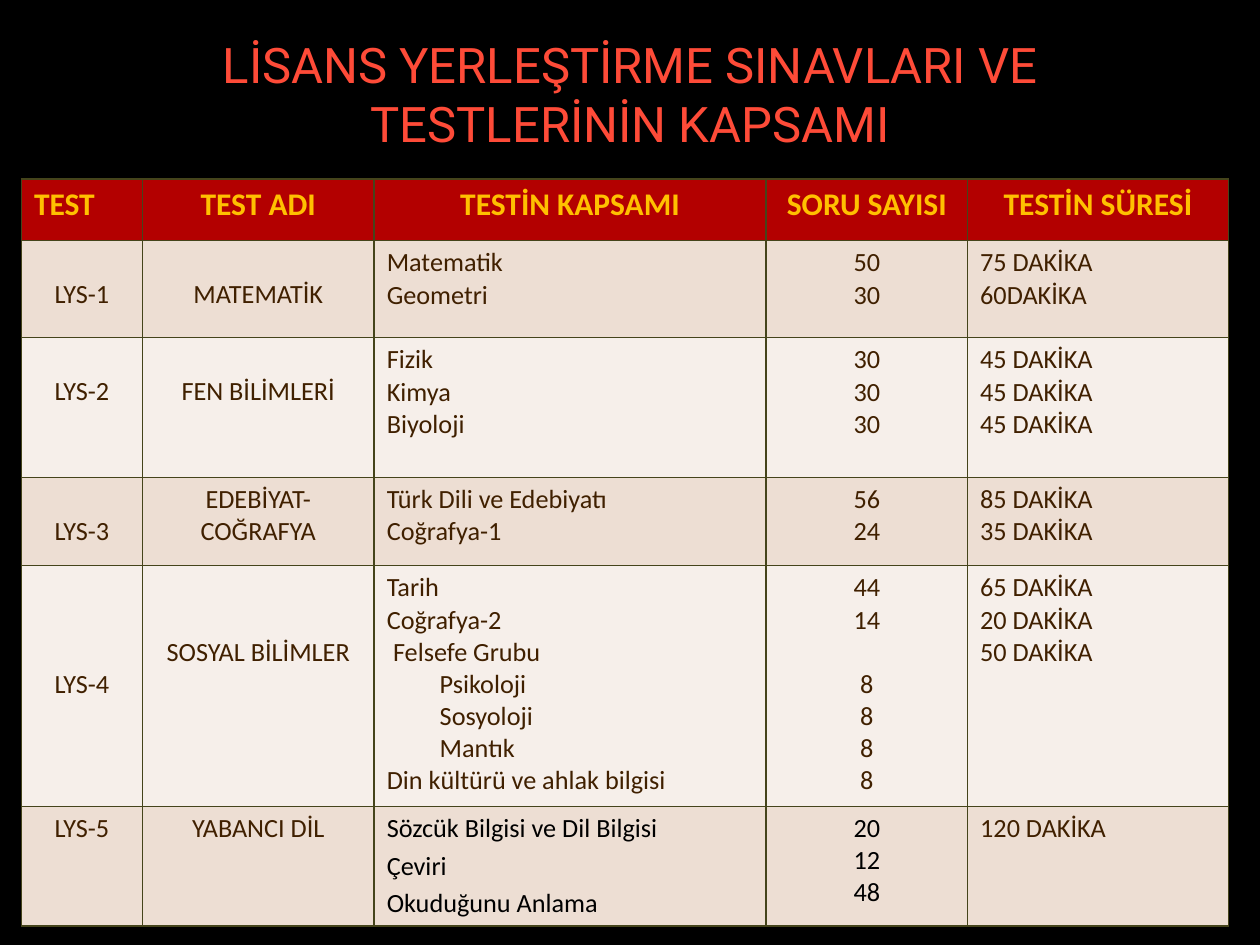
"""Builds a slide with a table of the university placement tests."""
from lxml.etree import SubElement
from pptx import Presentation
from pptx.dml.color import RGBColor
from pptx.enum.text import MSO_ANCHOR, PP_ALIGN as Align
from pptx.oxml.ns import qn
from pptx.util import Inches, Pt

HEADER = ["TEST", "TEST ADI", "TESTİN KAPSAMI", "SORU SAYISI", "TESTİN SÜRESİ"]
TESTS = [
    ["LYS-1", "MATEMATİK", "Matematik\nGeometri", "50\n30", "75 DAKİKA\n60DAKİKA"],
    ["LYS-2", "FEN BİLİMLERİ", "Fizik\nKimya\nBiyoloji", "30\n30\n30",
     "45 DAKİKA\n45 DAKİKA\n45 DAKİKA"],
    ["LYS-3", "EDEBİYAT-COĞRAFYA", "Türk Dili ve Edebiyatı\nCoğrafya-1", "56\n24",
     "85 DAKİKA\n35 DAKİKA"],
    ["LYS-4", "SOSYAL BİLİMLER",
     "Tarih\nCoğrafya-2\nFelsefe Grubu\nPsikoloji\nSosyoloji\nMantık\n"
     "Din kültürü ve ahlak bilgisi",
     "44\n14\n8\n8\n8\n8", "65 DAKİKA\n20 DAKİKA\n50 DAKİKA"],
    ["LYS-5", "YABANCI DİL", "Sözcük Bilgisi ve Dil Bilgisi\nÇeviri\nOkuduğunu Anlama",
     "20\n12\n48", "120 DAKİKA"],
]
WIDTHS = [0.96, 1.84, 3.11, 1.6, 2.07]
HEIGHTS = [0.49, 0.77, 1.11, 0.7, 1.91, 0.95]
LINES_ABOVE = {(1, 0): 1, (1, 1): 1, (2, 0): 1, (2, 1): 1, (3, 0): 1, (4, 0): 3, (4, 1): 2}
INDENTS = {"Felsefe Grubu": 0.05, "Psikoloji": 0.42, "Sosyoloji": 0.42, "Mantık": 0.42}
LINE_POINTS = 18.3
CENTRED = (0, 1, 3)
BANDS = ("F6EFEA", "EDDED3")


def colour(code):
    """Turn a hex string into a colour."""
    return RGBColor.from_string(code)


class Slide:
    """Holds the style and the page being built."""

    body_font, title_font = "Calibri", "Roboto"
    border = "45441B"

    def __init__(self, deck, background):
        self.page = deck.slides.add_slide(deck.slide_layouts[6])
        fill = self.page.background.fill
        fill.solid()
        fill.fore_color.rgb = colour(background)

    def style(self, para, font, size, code, align, bold=False):
        """Format a paragraph and its runs."""
        para.alignment = align
        for span in para.runs:
            span.font.name, span.font.size, span.font.bold = font, Pt(size), bold
            span.font.color.rgb = colour(code)

    def title(self, text, left, top, width, height):
        """Add the centred heading."""
        box = self.page.shapes.add_textbox(*map(Inches, (left, top, width, height)))
        frame = box.text_frame
        frame.word_wrap = True
        frame.vertical_anchor = MSO_ANCHOR.MIDDLE
        frame.text = text
        self.style(frame.paragraphs[0], self.title_font, 28, "FE4B38", Align.CENTER)

    def table(self, left, top, widths, heights):
        """Add an empty table with the given columns and rows."""
        area = map(Inches, (left, top, sum(widths), sum(heights)))
        table = self.page.shapes.add_table(len(heights), len(widths), *area).table
        for column, width in zip(table.columns, widths):
            column.width = Inches(width)
        for row, height in zip(table.rows, heights):
            row.height = Inches(height)
        return table

    def cell(self, cell, text, fill, size, code, align, bold=False, lines_above=0):
        """Fill, border and write one cell."""
        properties = cell._tc.get_or_add_tcPr()
        for side in ("a:lnL", "a:lnR", "a:lnT", "a:lnB"):
            line = SubElement(properties, qn(side), w=str(Pt(1)))
            solid = SubElement(line, qn("a:solidFill"))
            SubElement(solid, qn("a:srgbClr"), val=self.border)
        cell.fill.solid()
        cell.fill.fore_color.rgb = colour(fill)
        cell.margin_top = Inches(0.05) + Pt(LINE_POINTS * lines_above)
        cell.text_frame.text = text
        for para in cell.text_frame.paragraphs:
            self.style(para, self.body_font, size, code, align, bold)
            if para.text in INDENTS:
                para._p.get_or_add_pPr().set("marL", str(Inches(INDENTS[para.text])))


def main():
    """Build and save the deck."""
    deck = Presentation()
    deck.slide_width, deck.slide_height = Inches(10), Inches(7.5)
    slide = Slide(deck, "000000")
    slide.title("LİSANS YERLEŞTİRME SINAVLARI VE TESTLERİNİN KAPSAMI", 0.5, 0.33, 9, 0.83)
    table = slide.table(0.17, 1.42, WIDTHS, HEIGHTS)
    for column, text in enumerate(HEADER):
        align = Align.CENTER if column else Align.LEFT
        slide.cell(table.cell(0, column), text, "B30000", 18, "FFC000", align, bold=True)
    for row, test in enumerate(TESTS, 1):
        for column, text in enumerate(test):
            code = "000000" if row == 5 and column in (2, 3) else "402000"
            align = Align.CENTER if column in CENTRED else Align.LEFT
            slide.cell(table.cell(row, column), text, BANDS[row % 2], 15, code, align,
                       lines_above=LINES_ABOVE.get((row, column), 0))
    table.cell(4, 3).text_frame.paragraphs[2].space_before = Pt(LINE_POINTS)
    for para in table.cell(5, 2).text_frame.paragraphs[1:]:
        para.space_before = Pt(3)
    deck.save("out.pptx")


if __name__ == "__main__":
    main()
